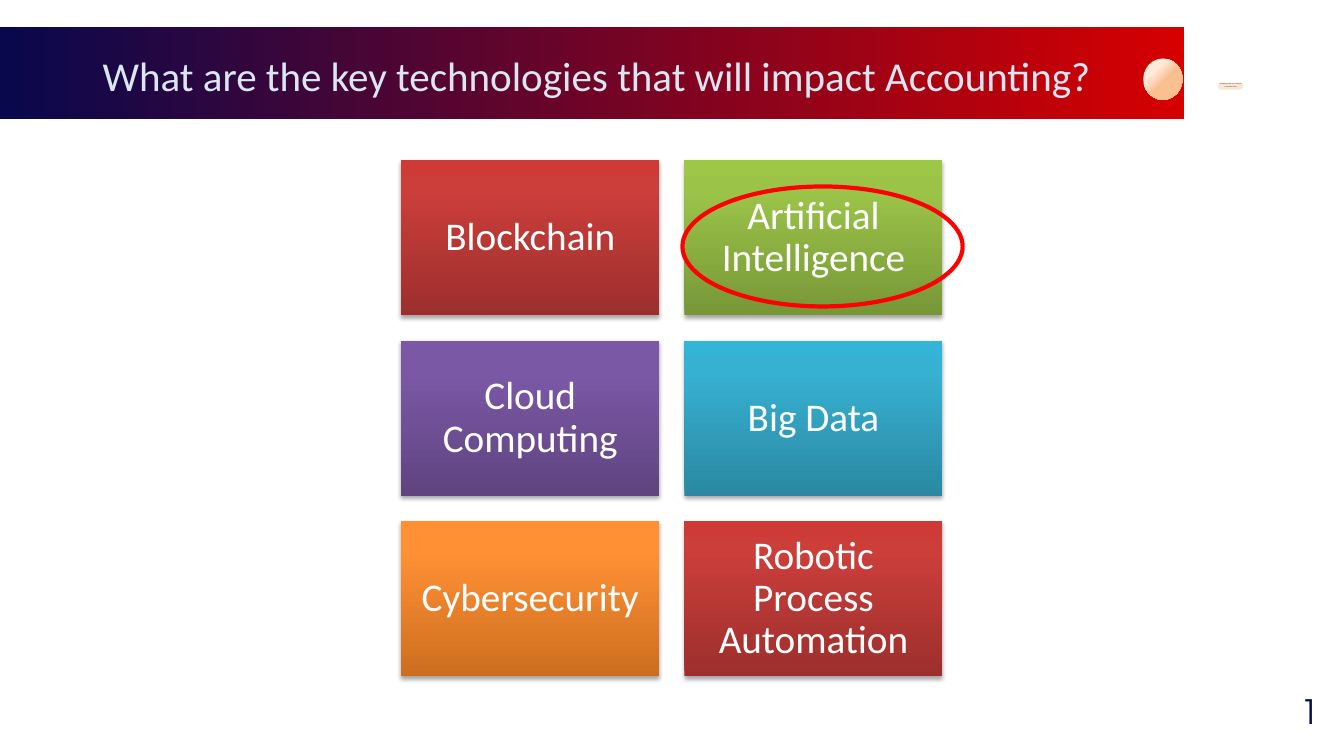
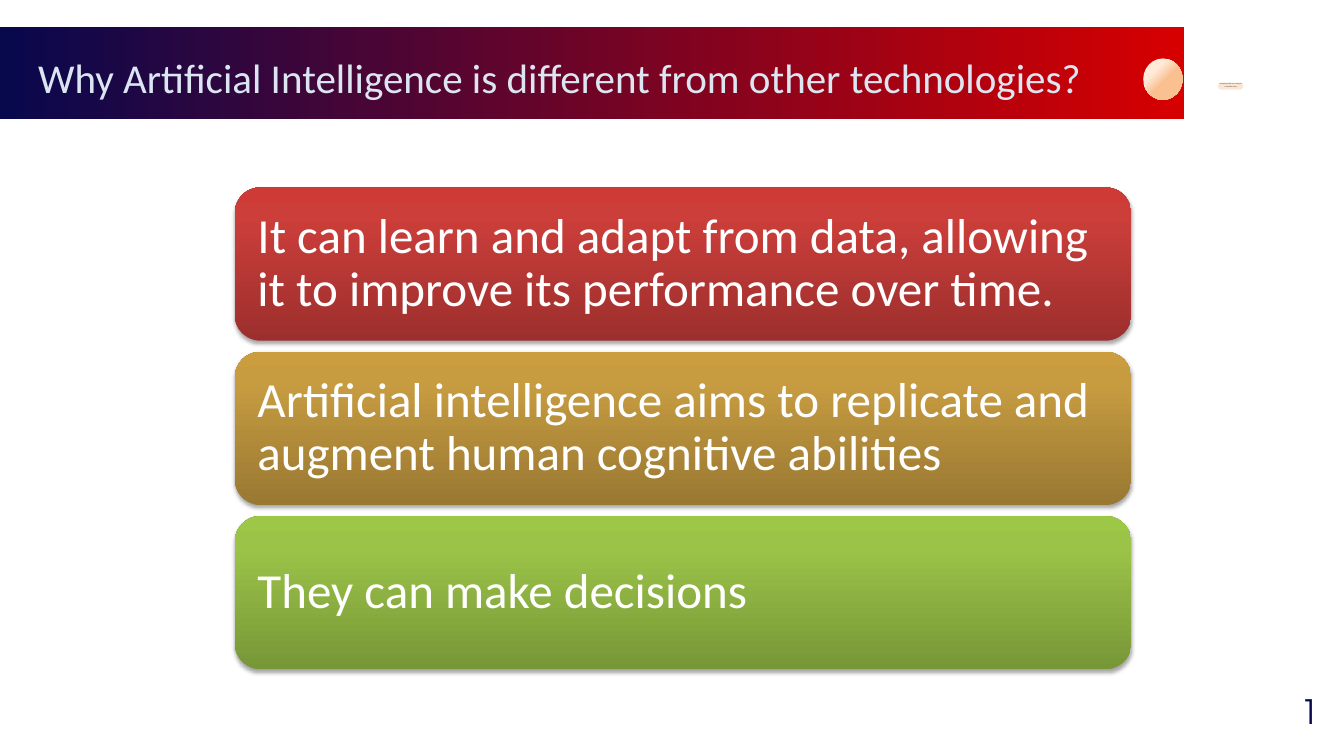
"""Build two slides on key accounting technologies and artificial intelligence."""
from lxml import etree
from pptx import Presentation
from pptx import util as u
from pptx.dml.color import RGBColor
from pptx.enum import shapes, text
from pptx.oxml import ns

COLS, ROWS = 160, 90
FONT = "Calibri"
COLORS = {
    "navy": "08084D", "crimson": "D60000", "title": "DCE6F2", "white": "FFFFFF",
    "black": "000000", "ring": "FF0000", "capsule": "F9E6D5",
    "peach": "FAC090", "cream": "FFEAD8",
}
TILES = {
    "red": ("9C2F2D", "CB3E3A", "CE3B37"),
    "green": ("779737", "9BC348", "9DC746"),
    "purple": ("5F4480", "7B58A6", "7C57A8"),
    "blue": ("2A88A2", "37B1D2", "34B4D6"),
    "orange": ("CC6E20", "FF9034", "FF9136"),
    "gold": ("997832", "C79C41", "CB9D3F"),
}
SHAPE = shapes.MSO_SHAPE
ALIGN = text.PP_ALIGN
ANCHOR = text.MSO_ANCHOR


def rgb(name):
    """Return the named colour."""
    return RGBColor.from_string(COLORS[name])


def child(parent, tag, **attrs):
    """Append a drawing element with the given attributes."""
    el = etree.SubElement(parent, ns.qn("a:" + tag))
    for key, value in attrs.items():
        el.set(key, str(value))
    return el


def write(sp, words, size, color="white", font=FONT, align=ALIGN.LEFT,
          anchor=ANCHOR.TOP, spacing=None, inset=0):
    """Put one formatted paragraph into a shape."""
    tf = sp.text_frame
    tf.word_wrap = True
    tf.vertical_anchor = anchor
    tf.margin_left = tf.margin_right = u.Inches(inset)
    tf.margin_top = tf.margin_bottom = u.Inches(inset)
    p = tf.paragraphs[0]
    p.alignment = align
    if spacing:
        p.line_spacing = spacing
    r = p.add_run()
    r.text = words
    r.font.name, r.font.size = font, u.Pt(size)
    r.font.color.rgb = rgb(color)


def gradient(sp, stops, angle=None):
    """Fill a shape with a linear gradient, or a radial one without an angle."""
    sp.fill.background()
    old = sp.element.spPr.find(ns.qn("a:noFill"))
    fill = etree.Element(ns.qn("a:gradFill"), rotWithShape="1")
    old.getparent().replace(old, fill)
    stop_list = child(fill, "gsLst")
    for pos, value in stops:
        child(child(stop_list, "gs", pos=pos * 1000), "srgbClr", val=value)
    if angle is None:
        focus = child(fill, "path", path="circle")
        child(focus, "fillToRect", l=100000, t=100000)
    else:
        child(fill, "lin", ang=angle * 60000, scaled=0)


def shade(sp):
    """Give a shape a soft shadow below."""
    effects = sp.element.spPr.find(ns.qn("a:effectLst"))
    shadow = child(effects, "outerShdw", blurRad=u.Pt(3.1), dist=u.Pt(1.8),
                   dir=90 * 60000, rotWithShape=0)
    child(child(shadow, "srgbClr", val=COLORS["black"]), "alpha", val=35000)


class Deck:
    """Hold the deck style and the current slide."""

    def __init__(self):
        """Open a widescreen presentation."""
        self.prs = Presentation()
        self.prs.slide_width, self.prs.slide_height = u.Inches(13.33), u.Inches(7.5)
        self.s = None

    def place(self, x, y, w, h):
        """Turn columns and rows into lengths."""
        col, row = self.prs.slide_width / COLS, self.prs.slide_height / ROWS
        return round(x * col), round(y * row), round(w * col), round(h * row)

    def shape(self, kind, *at):
        """Add a plain shape without fill, line or shadow."""
        sp = self.s.shapes.add_shape(kind, *self.place(*at))
        sp.shadow.inherit = False
        sp.fill.background()
        sp.line.fill.background()
        return sp

    def label(self, at, words, size, **fmt):
        """Add a text box."""
        write(self.s.shapes.add_textbox(*self.place(*at)), words, size, **fmt)

    def slide(self, title, x, y):
        """Start a slide with its band, ornaments, number and title."""
        self.s = self.prs.slides.add_slide(self.prs.slide_layouts[6])
        band = self.shape(SHAPE.RECTANGLE, 0, 3.24, 141, 10.92)
        gradient(band, [(0, COLORS["navy"]), (100, COLORS["crimson"])], 0)
        self.label((153.6, 82.2, 4.56, 4.56), "1", 24, color="navy",
                   font="TeX Gyre Adventor", align=ALIGN.CENTER, spacing=u.Pt(28.8))
        capsule = self.shape(SHAPE.ROUNDED_RECTANGLE, 145, 9.84, 3, 0.84)
        capsule.adjustments[0] = 0.5
        capsule.fill.solid()
        capsule.fill.fore_color.rgb = rgb("capsule")
        self.label((145, 9.84, 3.12, 0.6),
                   "Navigating Public Accounting for Sustainable Future", 1.2,
                   color="black", font="League Spartan", align=ALIGN.CENTER,
                   spacing=u.Pt(1.7))
        dot = self.shape(SHAPE.FLOWCHART_CONNECTOR, 136.1, 6.96, 4.68, 4.92)
        gradient(dot, [(45, COLORS["peach"]), (69, COLORS["cream"])])
        self.label((x, y, 138, 17.4), title, 29.3, color="title", inset=0.1)

    def tile(self, kind, at, words, tone, size, **fmt):
        """Add a shaded tile with centred or left-aligned text."""
        sp = self.shape(kind, *at)
        gradient(sp, zip((0, 80, 100), TILES[tone]), 270)
        shade(sp)
        write(sp, words, size, anchor=ANCHOR.MIDDLE, spacing=0.9, **fmt)

    def tiles(self, items, x, y, w, h, gap, columns=1, **fmt):
        """Lay tiles out row by row with equal gaps."""
        for i, (words, tone) in enumerate(items):
            row, col = divmod(i, columns)
            at = x + col * (w + gap), y + row * (h + gap), w, h
            self.tile(at=at, words=words, tone=tone, **fmt)

    def ring(self, *at):
        """Circle an area in red."""
        sp = self.shape(SHAPE.OVAL, *at)
        sp.line.color.rgb = rgb("ring")
        sp.line.width = u.Pt(3)


def main():
    """Build and save the deck."""
    deck = Deck()
    deck.slide("What are the key technologies that will impact Accounting?", 11.04, 4.8)
    deck.tiles([
        ("Blockchain", "red"), ("Artificial Intelligence", "green"),
        ("Cloud Computing", "purple"), ("Big Data", "blue"),
        ("Cybersecurity", "orange"), ("Robotic Process Automation", "red"),
    ], 47.76, 19.08, 30.72, 18.48, 3, columns=2, kind=SHAPE.RECTANGLE, size=28,
        align=ALIGN.CENTER, inset=0.12)
    deck.ring(81.24, 22.2, 33.36, 14.28)

    deck.slide("Why Artificial Intelligence is different from other technologies?", 3.36, 5.04)
    deck.tiles([
        ("It can learn and adapt from data, allowing it to improve its performance "
         "over time.", "red"),
        ("Artificial intelligence aims to replicate and augment human cognitive "
         "abilities", "gold"),
        ("They can make decisions", "green"),
    ], 27.96, 22.32, 106.7, 18.24, 1.32, kind=SHAPE.ROUNDED_RECTANGLE, size=35,
        inset=0.15)
    deck.prs.save("out.pptx")


if __name__ == "__main__":
    main()
